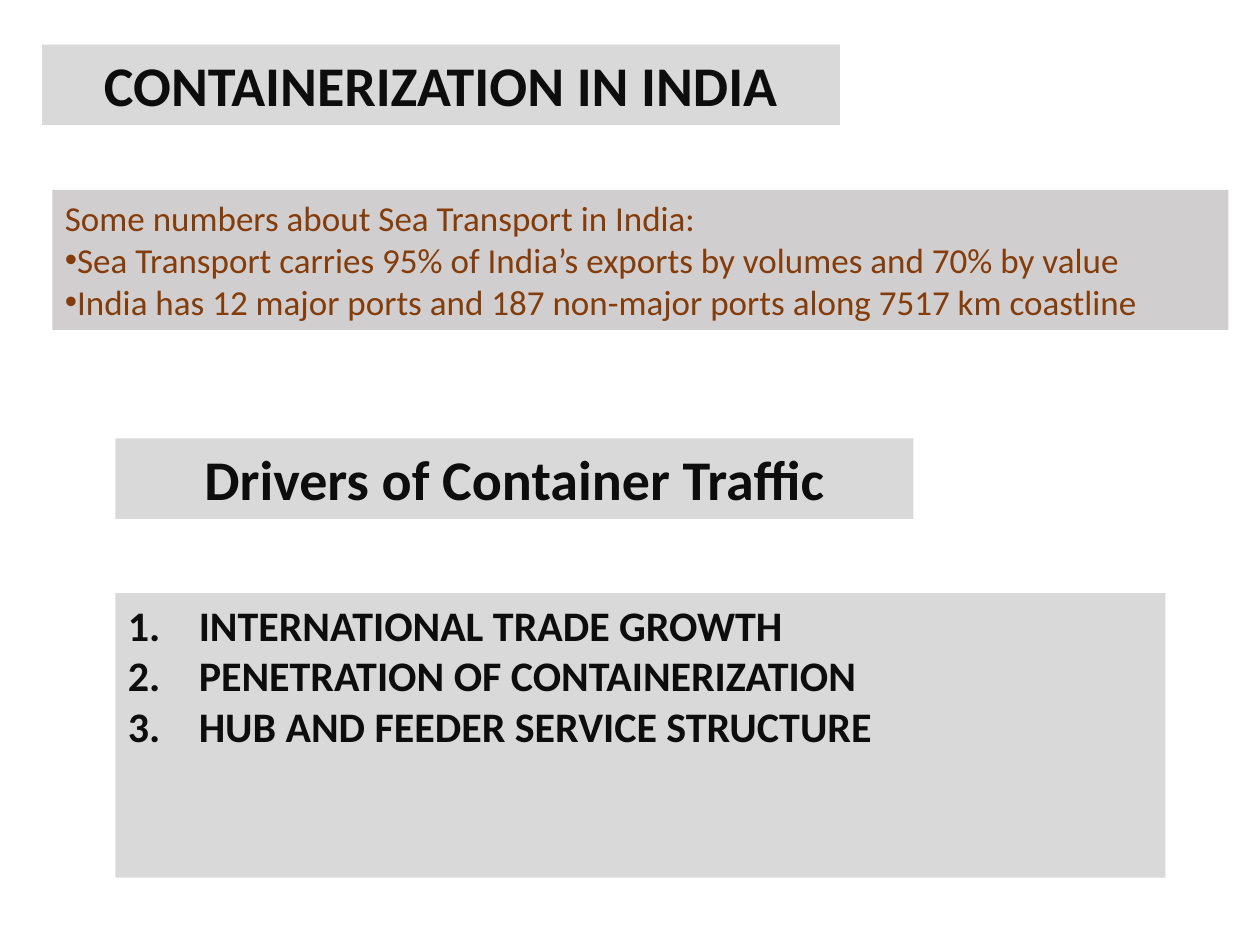
from pptx import Presentation
from pptx.util import Pt
from pptx.dml.color import RGBColor
from pptx.enum.text import PP_ALIGN as Align, MSO_ANCHOR as Anchor, MSO_AUTO_SIZE as Fit
from lxml.etree import SubElement as Sub
from pptx.oxml.ns import qn


def paint(obj, code):
    obj.solid()
    obj.fore_color.rgb = RGBColor.from_string(code)


deck = Presentation()
deck.slide_width, deck.slide_height = Pt(720), Pt(540)
slide = deck.slides.add_slide(deck.slide_layouts[5])

head = {"size": Pt(32), "bold": True}
note = {"size": Pt(20), "bold": False}
item = {"size": Pt(24), "bold": True}
dot = ("a:buChar", {"char": "•"}, 0)
num = ("a:buAutoNum", {"type": "arabicPeriod"}, 40.5)
boxes = [
    ((24, 25.5, 456, 46), "D9D9D9", "0D0D0D", head, Align.CENTER,
     [("CONTAINERIZATION IN INDIA", None)]),
    ((30, 108.5, 672, 80), "D0CECE", "843C0B", note, Align.LEFT,
     [("Some numbers about Sea Transport in India:", None),
      ("Sea Transport carries 95% of India’s exports by volumes and 70% by value", dot),
      ("India has 12 major ports and 187 non-major ports along 7517 km coastline", dot)]),
    ((66, 250.5, 456, 46), "D9D9D9", "0D0D0D", head, Align.CENTER,
     [("Drivers of Container Traffic", None)]),
    ((66, 339, 600, 162.5), "D9D9D9", "0D0D0D", item, Align.LEFT,
     [("INTERNATIONAL TRADE GROWTH", num),
      ("PENETRATION OF CONTAINERIZATION", num),
      ("HUB AND FEEDER SERVICE STRUCTURE", num)]),
]
frame = {"word_wrap": True, "auto_size": Fit.NONE, "vertical_anchor": Anchor.TOP}

for n, (place, back, ink, style, align, lines) in enumerate(boxes):
    spot = [Pt(v) for v in place]
    if n == 0:
        box = slide.shapes.title
        box.left, box.top, box.width, box.height = spot
    else:
        box = slide.shapes.add_textbox(*spot)
    paint(box.fill, back)
    text = box.text_frame
    for key, val in frame.items():
        setattr(text, key, val)
    for i, (words, mark) in enumerate(lines):
        para = text.add_paragraph() if i else text.paragraphs[0]
        para.alignment = align
        run = para.add_run()
        run.text = words
        for key, val in {"name": "Calibri", **style}.items():
            setattr(run.font, key, val)
        paint(run.font.fill, ink)
        if mark:
            tag, attrs, dent = mark
            props = para._p.get_or_add_pPr()
            props.set("marL", str(Pt(dent)))
            props.set("indent", str(-Pt(dent)))
            if mark is dot:
                Sub(props, qn("a:buFont"), typeface="Arial")
            Sub(props, qn(tag), attrs)

deck.save("out.pptx")
